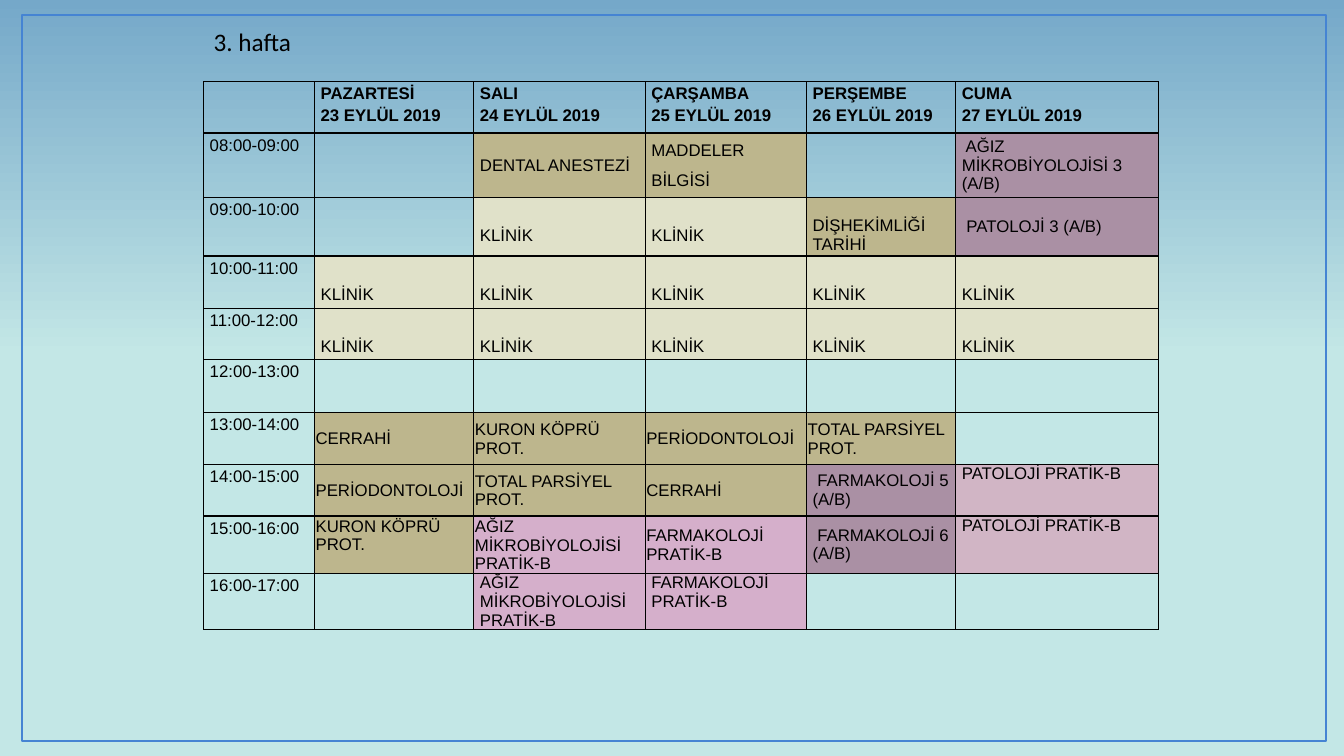
from itertools import product
from pptx import Presentation
from pptx.dml.color import RGBColor as Rgb
from pptx.enum.shapes import MSO_SHAPE as Shape
from pptx.enum.text import MSO_ANCHOR as Anchor
from pptx.oxml import parse_xml as to_xml
from pptx.oxml.ns import nsdecls
from pptx.util import Inches, Pt

COLS = [1.1, 1.58, 1.7, 1.6, 1.48, 2.01]
ROWS = [0.51, 0.64, 0.58, 0.52, 0.51, 0.52, 0.52, 0.51, 0.57, 0.56]
DAYS = ["PAZARTESİ", "SALI", "ÇARŞAMBA", "PERŞEMBE", "CUMA"]

TAN, CREAM, MAUVE, ROSE, PINK = "BDB68D", "E0E1C9", "AA90A4", "D1B5C5", "D5AFCB"
TOP, MID = Anchor.TOP, Anchor.MIDDLE

# Cell kinds: fill, anchor, side inset, top inset
KINDS = {
    "plain": (None, TOP, 0.06, 0),
    "talk": (TAN, MID, 0.06, 0),
    "low": (TAN, TOP, 0.06, 0.19),
    "clinic": (CREAM, TOP, 0.06, 0.29),
    "group": (MAUVE, MID, 0.06, 0),
    "class": (TAN, MID, 0.01, 0.01),
    "high": (TAN, TOP, 0.01, 0.01),
    "lab": (PINK, MID, 0.01, 0.01),
    "late": (PINK, TOP, 0.06, 0),
    "path": (ROSE, TOP, 0.06, 0),
}

FREE = ("plain", "")
CLINIC = ("clinic", "KLİNİK")
PATH = ("path", "PATOLOJİ PRATİK-B")
MICRO = "AĞIZ MİKROBİYOLOJİSİ PRATİK-B"
PHARMA = "FARMAKOLOJİ PRATİK-B"
CROWN = "KURON KÖPRÜ PROT."
TOTAL = ("class", "TOTAL PARSİYEL PROT.")
PERIO = ("class", "PERİODONTOLOJİ")
SURGERY = ("class", "CERRAHİ")

# One row for each hour from 08:00
HOURS = [
    [FREE, ("talk", "DENTAL ANESTEZİ"), ("talk", "MADDELER\nBİLGİSİ"), FREE,
     ("group", " AĞIZ MİKROBİYOLOJİSİ 3 (A/B)")],
    [FREE, CLINIC, CLINIC, ("low", "DİŞHEKİMLİĞİ TARİHİ"),
     ("group", " PATOLOJİ 3 (A/B)")],
    [CLINIC] * 5,
    [CLINIC] * 5,
    [FREE] * 5,
    [SURGERY, ("class", CROWN), PERIO, TOTAL, FREE],
    [PERIO, TOTAL, SURGERY, ("group", " FARMAKOLOJİ 5 (A/B)"), PATH],
    [("high", CROWN), ("lab", MICRO), ("lab", PHARMA),
     ("group", " FARMAKOLOJİ 6 (A/B)"), PATH],
    [FREE, ("late", MICRO), ("late", PHARMA), FREE, FREE],
]


def color(code):
    return Rgb.from_string(code)


def style(frame, font, size, bold=False):
    for para in frame.paragraphs:
        for run in para.runs:
            run.font.name = font
            run.font.size = Pt(size)
            run.font.bold = bold
            run.font.color.rgb = color("000000")


def paint(slide):
    fill = slide.background.fill
    fill.gradient()
    fill.gradient_angle = 90
    for stop, (spot, code) in zip(fill.gradient_stops,
                                  [(0.53, "C3E7E6"), (1, "75A8C9")]):
        stop.position = spot
        stop.color.rgb = color(code)


def add_frame(slide):
    box = slide.shapes.add_shape(Shape.RECTANGLE, Inches(0.22), Inches(0.15),
                                 Inches(12.93), Inches(7.2))
    box.shadow.inherit = False
    box.fill.background()
    box.line.color.rgb = color("4584D3")
    box.line.width = Pt(1.5)


def add_title(slide, text):
    box = slide.shapes.add_textbox(Inches(2.02), Inches(0.21),
                                   Inches(0.98), Inches(0.4))
    box.text_frame.text = text
    style(box.text_frame, "Calibri", 18)


def add_edges(cell):
    props = cell._tc.get_or_add_tcPr()
    for spot, side in enumerate("LRTB"):
        props.insert(spot, to_xml(
            f'<a:ln{side} {nsdecls("a")} w="12700"><a:solidFill>'
            f'<a:srgbClr val="000000"/></a:solidFill></a:ln{side}>'))


def fill_cell(cell, kind, text, bold=False, space=None):
    fill, anchor, side, top = KINDS[kind]
    cell.margin_left = cell.margin_right = Inches(side)
    cell.margin_top, cell.margin_bottom = Inches(top), 0
    cell.vertical_anchor = anchor
    if fill:
        cell.fill.solid()
        cell.fill.fore_color.rgb = color(fill)
    else:
        cell.fill.background()
    add_edges(cell)
    cell.text_frame.text = text
    style(cell.text_frame, "Arial", 12, bold)
    for para in cell.text_frame.paragraphs:
        if space:
            para.line_spacing = space
    if kind == "talk":
        for para in cell.text_frame.paragraphs[1:]:
            para.space_before = Pt(8)


def add_plan(slide):
    table = slide.shapes.add_table(len(ROWS), len(COLS), Inches(2.02), Inches(0.81),
                                   Inches(sum(COLS)), Inches(sum(ROWS))).table
    table.first_row = table.horz_banding = False
    for col, width in zip(table.columns, COLS):
        col.width = Inches(width)
    for row, height in zip(table.rows, ROWS):
        row.height = Inches(height)

    # Day headings and hour labels
    fill_cell(table.cell(0, 0), "plain", "")
    for c, day in enumerate(DAYS, 1):
        fill_cell(table.cell(0, c), "plain", f"{day}\n{22 + c} EYLÜL 2019", True, 1.15)
    for r in range(1, len(ROWS)):
        fill_cell(table.cell(r, 0), "plain", f"{r + 7:02}:00-{r + 8:02}:00", space=1.15)

    # Lessons
    for r, c in product(range(len(HOURS)), range(len(DAYS))):
        fill_cell(table.cell(r + 1, c + 1), *HOURS[r][c])


def main():
    deck = Presentation()
    deck.slide_width, deck.slide_height = Inches(13.33), Inches(7.5)
    slide = deck.slides.add_slide(deck.slide_layouts[6])
    paint(slide)
    add_frame(slide)
    add_plan(slide)
    add_title(slide, "3. hafta")
    deck.save("out.pptx")


if __name__ == "__main__":
    main()
